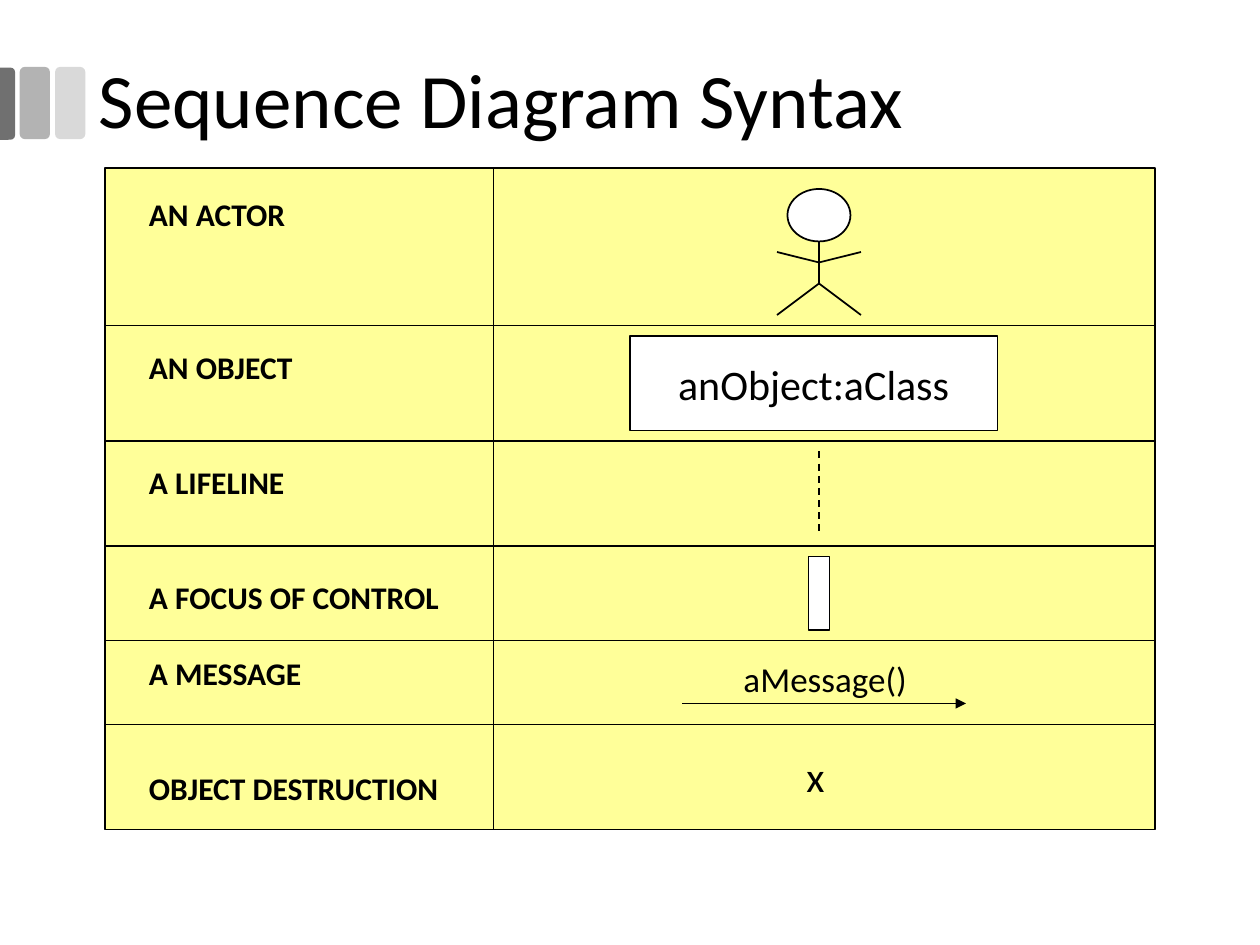
from itertools import pairwise

from lxml.etree import SubElement
from pptx import Presentation
from pptx.dml.color import RGBColor
from pptx.enum.dml import MSO_LINE_DASH_STYLE as Dash
from pptx.enum.shapes import MSO_CONNECTOR as Link, MSO_SHAPE as Shape
from pptx.enum.text import MSO_ANCHOR as Anchor, PP_ALIGN as Align
from pptx.oxml.ns import qn
from pptx.util import Pt

SCALE = 9525
COLORS = {"ink": "000000", "paper": "FFFFFF", "table": "FFFF99",
          "light": "D9D9D9", "middle": "B3B3B3", "dark": "707070"}
ROW_HEIGHTS = [120, 88, 80, 72, 64, 80]
LABEL_COLUMN = 296
BLANK_LINE = 22
LABELS = [("AN ACTOR", 0), ("AN OBJECT", 3), ("A LIFELINE", 2),
          ("A FOCUS OF CONTROL", 2), ("A MESSAGE", 1), ("OBJECT DESTRUCTION", 2)]


def color(name):
    """Return the named colour."""
    return RGBColor.from_string(COLORS[name])


def emu(*lengths):
    """Turn px lengths into EMU."""
    return [length * SCALE for length in lengths]


def apply(target, values):
    """Set each attribute of the target from a dict."""
    for name, value in values.items():
        setattr(target, name, value)


def add_shape(parent, kind, box, fill, outlined=True):
    """Add a filled preset shape."""
    shape = parent.shapes.add_shape(kind, *emu(*box))
    shape.shadow.inherit = False
    shape.fill.solid()
    shape.fill.fore_color.rgb = color(fill)
    if outlined:
        shape.line.color.rgb = color("ink")
        shape.line.width = Pt(1)
    else:
        shape.line.fill.background()
    return shape


def add_line(parent, start, end):
    """Add a thin straight line."""
    line = parent.shapes.add_connector(Link.STRAIGHT, *emu(*start, *end))
    line.line.color.rgb = color("ink")
    line.line.width = Pt(1)
    SubElement(line._element.spPr, qn("a:effectLst"))
    return line


def write(frame, texts, size, frame_format=None, para_format=None, bold=False):
    """Fill a frame with (text, space before) paragraphs."""
    apply(frame, {"word_wrap": True, **(frame_format or {})})
    for index, (text, space) in enumerate(texts):
        para = frame.add_paragraph() if index else frame.paragraphs[0]
        apply(para, para_format or {})
        if space:
            para.space_before = Pt(space)
        span = para.add_run()
        span.text = text
        apply(span.font, {"name": "Calibri", "size": Pt(size), "bold": bold})
        span.font.color.rgb = color("ink")


def add_text(page, box, *args, **formats):
    """Add a text box and write into it."""
    write(page.shapes.add_textbox(*emu(*box)).text_frame, *args, **formats)


def add_header(page, left, top):
    """Place the three grey tabs and the title."""
    tabs = page.shapes.add_group_shape()
    for offset, fill in [(42, "light"), (15, "middle")]:
        add_shape(tabs, Shape.ROUNDED_RECTANGLE, (left + offset, top + 35, 23, 55), fill, False)
    edge = add_shape(tabs, Shape.ROUND_2_SAME_RECTANGLE, (left - 22, top + 57, 55, 12), "dark", False)
    edge.adjustments[0] = 0.29
    edge.rotation = 90
    add_text(page, (left + 66, top, 828, 126), [("Sequence Diagram Syntax", 0)], 44,
             {"vertical_anchor": Anchor.MIDDLE}, {"line_spacing": 0.9})


def add_grid(page, left, top, width):
    """Place the ruled table and return the top of each row."""
    tops = [top + sum(ROW_HEIGHTS[:count]) for count in range(len(ROW_HEIGHTS) + 1)]
    add_shape(page, Shape.RECTANGLE, (left, top, width, tops[-1] - top), "table")
    divider = left + LABEL_COLUMN
    add_line(page, (divider, top), (divider, tops[-1]))
    for row in tops[1:-1]:
        add_line(page, (left, row), (left + width, row))
    texts = [(label, blanks * BLANK_LINE) for label, blanks in LABELS]
    add_text(page, (left + 24, top + 16, 242, 475), texts, 18, {"word_wrap": False}, bold=True)
    return tops[:-1]


def add_actor(page, center, top):
    """Place the stick figure."""
    figure = page.shapes.add_group_shape()
    add_shape(figure, Shape.OVAL, (center - 24, top, 48, 40), "paper")
    limbs = [[(0, 40), (0, 72)], [(-32, 48), (0, 56), (32, 48)], [(-32, 96), (0, 72), (32, 96)]]
    for limb in limbs:
        points = [(center + x, top + y) for x, y in limb]
        for start, end in pairwise(points):
            add_line(figure, start, end)


def add_object(page, center, top):
    """Place the named object box."""
    shape = add_shape(page, Shape.RECTANGLE, (center - 144, top, 280, 72), "paper")
    write(shape.text_frame, [("anObject:aClass", 0)], 24,
          {"word_wrap": False, "vertical_anchor": Anchor.MIDDLE}, {"alignment": Align.CENTER})


def add_lifeline(page, center, top):
    """Place the dashed lifeline."""
    add_line(page, (center, top), (center, top + 64)).line.dash_style = Dash.DASH


def add_focus(page, center, top):
    """Place the focus of control bar."""
    add_shape(page, Shape.RECTANGLE, (center - 8, top, 16, 56), "paper")


def add_message(page, center, top):
    """Place the message arrow and its caption."""
    arrow = add_line(page, (center - 104, top + 40), (center + 112, top + 40))
    SubElement(arrow.line._get_or_add_ln(), qn("a:tailEnd"), type="triangle")
    add_text(page, (center - 104, top, 193, 42), [("aMessage()", 0)], 20,
             {"margin_left": 34 * SCALE}, {"alignment": Align.CENTER})


def add_destruction(page, center, top):
    """Place the destruction mark."""
    add_text(page, (center - 19, top + 7, 36, 48), [("x", 0)], 24, {"word_wrap": False})


def main():
    """Build and save the deck."""
    deck = Presentation()
    deck.slide_width, deck.slide_height = emu(960, 720)
    page = deck.slides.add_slide(deck.slide_layouts[6])
    add_header(page, 0, 16)
    rows = add_grid(page, 80, 128, 800)
    symbols = [(add_actor, 16), (add_object, 8), (add_lifeline, 8),
               (add_focus, 8), (add_message, 8), (add_destruction, 8)]
    for row, (add_symbol, gap) in zip(rows, symbols):
        add_symbol(page, 624, row + gap)
    deck.save("out.pptx")


if __name__ == "__main__":
    main()
